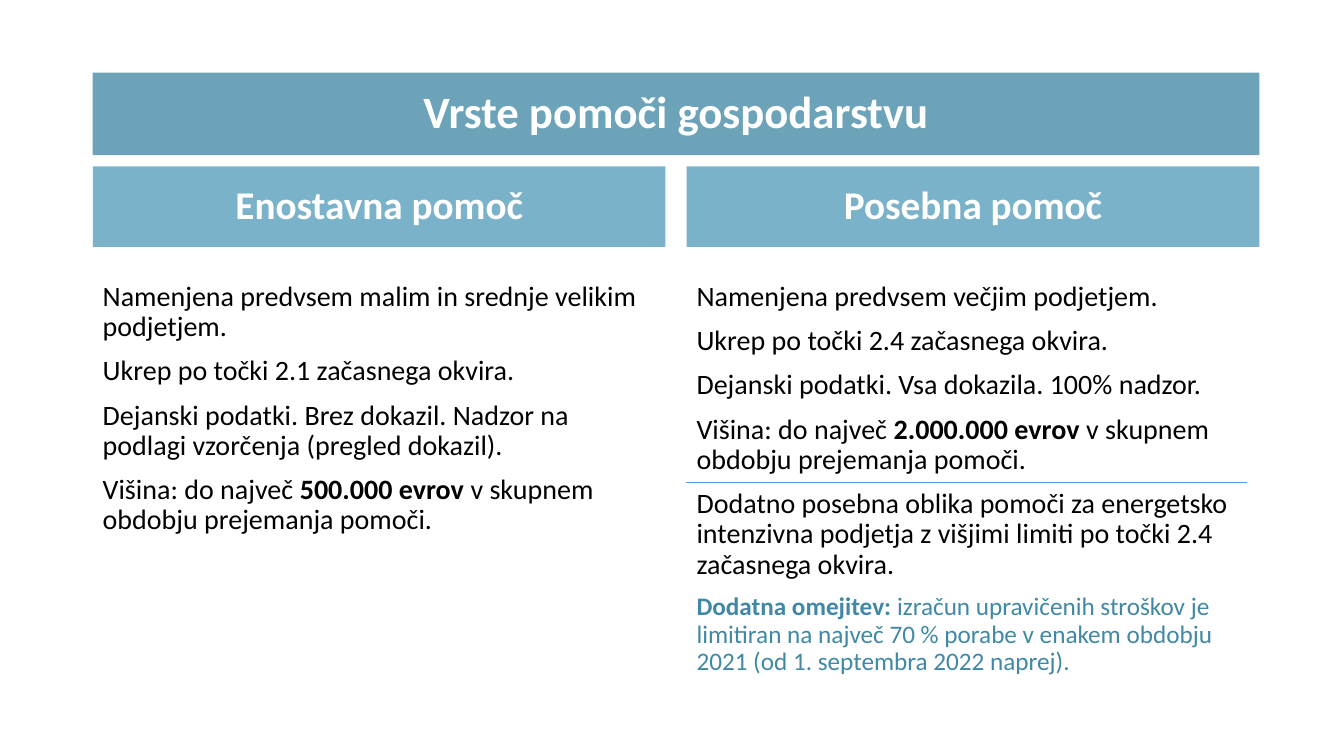
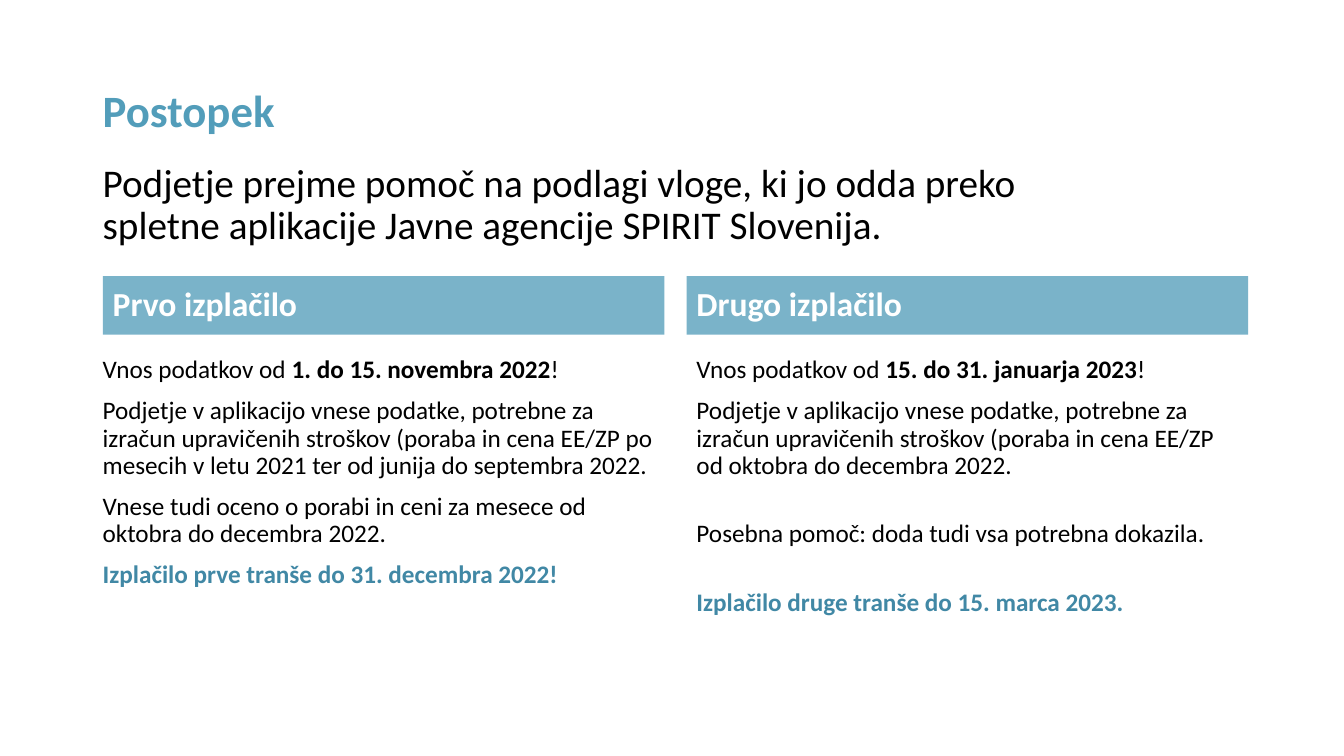
"""Build two slides on business aid: the kinds of aid and the payout procedure."""
from lxml.etree import SubElement
from pptx import Presentation
from pptx.dml.color import RGBColor
from pptx.enum.shapes import MSO_CONNECTOR, MSO_SHAPE
from pptx.enum.text import MSO_ANCHOR, PP_ALIGN
from pptx.oxml.ns import qn
from pptx.util import Inches, Pt

BLACK = RGBColor(0x00, 0x00, 0x00)
WHITE = RGBColor(0xFF, 0xFF, 0xFF)
BLUE = RGBColor(0x52, 0x9D, 0xBA)
DARK_BLUE = RGBColor(0x41, 0x88, 0xA5)
LINE_BLUE = RGBColor(0x5B, 0x9B, 0xD5)
FONT = "Calibri"
BAND_OPACITY = 77
LEFT, RIGHT, COLUMN_WIDTH = 0.92, 6.81, 5.68


def write_text(shape, paragraphs, anchor=MSO_ANCHOR.TOP, align=PP_ALIGN.LEFT):
    """Write (text, size, colour, space before) rows; ** switches bold on and off."""
    frame = shape.text_frame
    frame.word_wrap = True
    frame.vertical_anchor = anchor
    for index, (text, size, colour, before) in enumerate(paragraphs):
        para = frame.add_paragraph() if index else frame.paragraphs[0]
        para.alignment = align
        para.line_spacing = 0.9
        para.space_before = Pt(before if index else 0)
        for part, words in enumerate(text.split("**")):
            if words:
                span = para.add_run()
                span.text = words
                span.font.name = FONT
                span.font.size = Pt(size)
                span.font.bold = part % 2 == 1
                span.font.color.rgb = colour


def add_band(page, position, text, size, colour=BLUE, align=PP_ALIGN.CENTER):
    """Add a translucent heading band with bold white text."""
    band = page.shapes.add_shape(MSO_SHAPE.RECTANGLE, *map(Inches, position))
    band.shadow.inherit = False
    band.fill.solid()
    band.fill.fore_color.rgb = colour
    band.line.fill.background()
    tint = band.fill._xPr.find(qn("a:solidFill"))[0]
    SubElement(tint, qn("a:alpha")).set("val", str(BAND_OPACITY * 1000))
    write_text(band, [(f"**{text}**", size, WHITE, 0)], MSO_ANCHOR.MIDDLE, align)


deck = Presentation()
deck.slide_width = Inches(13.33)
deck.slide_height = Inches(7.5)
blank = deck.slide_layouts[6]

aid_page = deck.slides.add_slide(blank)
add_band(aid_page, (LEFT, 0.72, RIGHT + COLUMN_WIDTH - LEFT, 0.82),
         "Vrste pomoči gospodarstvu", 32, DARK_BLUE)
aid_columns = [
    (LEFT, 3.1, "Enostavna pomoč", [
        ("Namenjena predvsem malim in srednje velikim podjetjem.", 20, BLACK, 10),
        ("Ukrep po točki 2.1 začasnega okvira.", 20, BLACK, 10),
        ("Dejanski podatki. Brez dokazil. Nadzor na podlagi vzorčenja (pregled dokazil).",
         20, BLACK, 10),
        ("Višina: do največ **500.000 evrov **v skupnem obdobju prejemanja pomoči.",
         20, BLACK, 10),
    ]),
    (RIGHT, 4.36, "Posebna pomoč", [
        ("Namenjena predvsem večjim podjetjem.", 20, BLACK, 10),
        ("Ukrep po točki 2.4 začasnega okvira.", 20, BLACK, 10),
        ("Dejanski podatki. Vsa dokazila. 100% nadzor.", 20, BLACK, 10),
        ("Višina: do največ **2.000.000 evrov **v skupnem obdobju prejemanja pomoči.",
         20, BLACK, 10),
        ("Dodatno posebna oblika pomoči za energetsko intenzivna podjetja z višjimi "
         "limiti po točki 2.4 začasnega okvira.", 20, BLACK, 10),
        ("**Dodatna omejitev: **izračun upravičenih stroškov je limitiran na največ "
         "70 % porabe v enakem obdobju 2021 (od 1. septembra 2022 naprej).",
         18, DARK_BLUE, 10),
    ]),
]
for left, height, heading, paragraphs in aid_columns:
    add_band(aid_page, (left, 1.65, COLUMN_WIDTH, 0.8), heading, 28)
    box = aid_page.shapes.add_textbox(
        Inches(left), Inches(2.75), Inches(COLUMN_WIDTH), Inches(height))
    write_text(box, paragraphs)

divider = aid_page.shapes.add_connector(
    MSO_CONNECTOR.STRAIGHT, Inches(6.8), Inches(4.79), Inches(12.37), Inches(4.79))
divider.line.color.rgb = LINE_BLUE
divider.line.width = Pt(0.5)
SubElement(divider._element.spPr, qn("a:effectLst"))

steps_page = deck.slides.add_slide(blank)
title = steps_page.shapes.add_textbox(Inches(LEFT), Inches(0.4), Inches(11.5), Inches(1.45))
write_text(title, [("**Postopek**", 32, BLUE, 0)], MSO_ANCHOR.MIDDLE)
intro = steps_page.shapes.add_textbox(Inches(LEFT), Inches(1.57), Inches(9.85), Inches(0.99))
write_text(intro, [("Podjetje prejme pomoč na podlagi vloge, ki jo odda preko spletne "
                    "aplikacije Javne agencije SPIRIT Slovenija.", 28, BLACK, 0)])
payouts = [
    (1.02, LEFT, COLUMN_WIDTH, 2.75, "Prvo izplačilo", [
        ("Vnos podatkov od **1. do 15. novembra 2022**!", 18, BLACK, 10),
        ("Podjetje v aplikacijo vnese podatke, potrebne za izračun upravičenih stroškov "
         "(poraba in cena EE/ZP po mesecih v letu 2021 ter od junija do septembra 2022.",
         18, BLACK, 10),
        ("Vnese tudi oceno o porabi in ceni za mesece od oktobra do decembra 2022.",
         18, BLACK, 10),
        ("**Izplačilo prve tranše do 31. decembra 2022!**", 18, DARK_BLUE, 10),
    ]),
    (RIGHT, RIGHT, 5.6, 3.08, "Drugo izplačilo", [
        ("Vnos podatkov od **15. do 31. januarja 2023**!", 18, BLACK, 10),
        ("Podjetje v aplikacijo vnese podatke, potrebne za izračun upravičenih stroškov "
         "(poraba in cena EE/ZP od oktobra do decembra 2022.", 18, BLACK, 10),
        ("Posebna pomoč: doda tudi vsa potrebna dokazila.", 18, BLACK, 29.5),
        ("**Izplačilo druge tranše do 15. marca 2023.**", 18, DARK_BLUE, 29.5),
    ]),
]
for band_left, text_left, text_width, height, heading, paragraphs in payouts:
    add_band(steps_page, (band_left, 2.74, 5.57, 0.58), heading, 24, align=PP_ALIGN.LEFT)
    box = steps_page.shapes.add_textbox(
        Inches(text_left), Inches(3.49), Inches(text_width), Inches(height))
    write_text(box, paragraphs)

deck.save("out.pptx")
